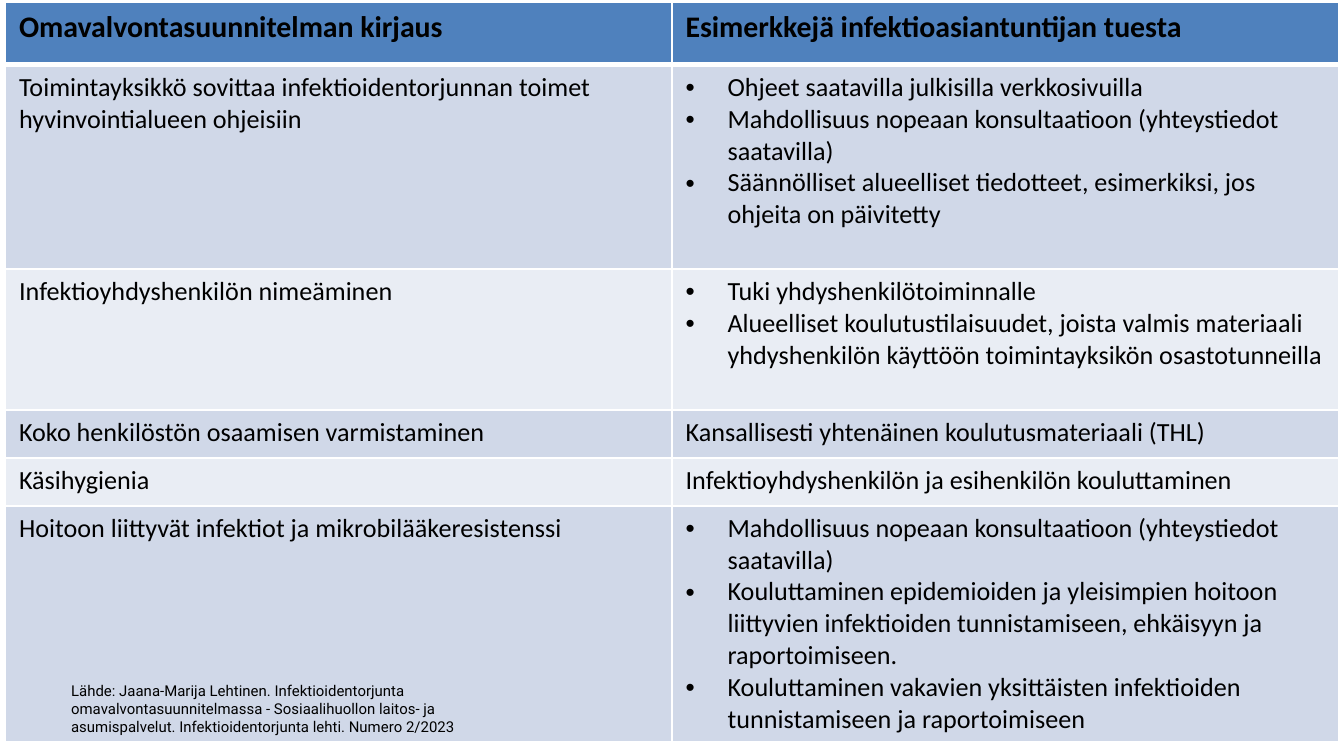
from dataclasses import dataclass

from lxml.etree import SubElement
from pptx import Presentation
from pptx.dml.color import RGBColor
from pptx.oxml.ns import qn
from pptx.util import Pt

BLACK = RGBColor(0, 0, 0)
WHITE = RGBColor(255, 255, 255)
BLUE = RGBColor(0x4F, 0x81, 0xBD)
BANDS = (RGBColor(0xE9, 0xED, 0xF4), RGBColor(0xD0, 0xD8, 0xE8))
INDENT = Pt(22.5)


@dataclass
class Row:
    height: float
    left: str
    right: list[str]


ROWS = [
    Row(33.4, "Omavalvontasuunnitelman kirjaus",
        ["Esimerkkejä infektioasiantuntijan tuesta"]),
    Row(109.4, "Toimintayksikkö sovittaa infektioidentorjunnan toimet hyvinvointialueen ohjeisiin",
        ["Ohjeet saatavilla julkisilla verkkosivuilla",
         "Mahdollisuus nopeaan konsultaatioon (yhteystiedot saatavilla)",
         "Säännölliset alueelliset tiedotteet, esimerkiksi, jos ohjeita on päivitetty"]),
    Row(75.6, "Infektioyhdyshenkilön nimeäminen",
        ["Tuki yhdyshenkilötoiminnalle",
         "Alueelliset koulutustilaisuudet, joista valmis materiaali "
         "yhdyshenkilön käyttöön toimintayksikön osastotunneilla"]),
    Row(25.6, "Koko henkilöstön osaamisen varmistaminen",
        ["Kansallisesti yhtenäinen koulutusmateriaali (THL)"]),
    Row(25.6, "Käsihygienia",
        ["Infektioyhdyshenkilön ja esihenkilön kouluttaminen"]),
    Row(126.7, "Hoitoon liittyvät infektiot ja mikrobilääkeresistenssi",
        ["Mahdollisuus nopeaan konsultaatioon (yhteystiedot saatavilla)",
         "Kouluttaminen epidemioiden ja yleisimpien hoitoon liittyvien infektioiden "
         "tunnistamiseen, ehkäisyyn ja raportoimiseen.",
         "Kouluttaminen vakavien yksittäisten infektioiden tunnistamiseen ja raportoimiseen"]),
]
SOURCE = ("Lähde: Jaana-Marija Lehtinen. Infektioidentorjunta omavalvontasuunnitelmassa - "
          "Sosiaalihuollon laitos- ja asumispalvelut. Infektioidentorjunta lehti. Numero 2/2023")


def write(frame, lines: list[str], *, size: float = 14, font: str = "Calibri",
          bold: bool = False, bullet: bool = False) -> None:
    """Fill a text frame, one paragraph a line."""
    frame.word_wrap = True
    for i, line in enumerate(lines):
        para = frame.paragraphs[0] if i == 0 else frame.add_paragraph()
        if bullet:
            props = para._p.get_or_add_pPr()
            props.set("marL", str(INDENT))
            props.set("indent", str(-INDENT))
            SubElement(props, qn("a:buFont"), typeface="Arial")
            SubElement(props, qn("a:buChar"), char="•")
        run = para.add_run()
        run.text = line
        run.font.name = font
        run.font.size = Pt(size)
        run.font.bold = bold
        run.font.color.rgb = BLACK


def border(cell, top: float, bottom: float) -> None:
    """Draw white cell borders; the sides are 1 pt."""
    props = cell._tc.get_or_add_tcPr()
    for side, width in zip("LRTB", (1, 1, top, bottom)):
        line = SubElement(props, qn(f"a:ln{side}"), w=str(Pt(width)))
        fill = SubElement(line, qn("a:solidFill"))
        SubElement(fill, qn("a:srgbClr"), val=str(WHITE))


def draw_table(slide, rows: list[Row]) -> None:
    high = sum(row.height for row in rows)
    table = slide.shapes.add_table(len(rows), 2, Pt(3), Pt(1.4), Pt(714.2), Pt(high)).table
    for r, row in enumerate(rows):
        table.rows[r].height = Pt(row.height)
        head = r == 0
        for c, lines in enumerate(([row.left], row.right)):
            cell = table.cell(r, c)
            border(cell, 3 if r == 1 else 1, 3 if head else 1)
            cell.fill.solid()
            cell.fill.fore_color.rgb = BLUE if head else BANDS[r % 2]
            write(cell.text_frame, lines, size=16 if head else 14,
                  bold=head, bullet=len(lines) > 1)


def main() -> None:
    deck = Presentation()
    deck.slide_width, deck.slide_height = Pt(720), Pt(405)
    slide = deck.slides.add_slide(deck.slide_layouts[6])

    # Table of plan entries and support
    draw_table(slide, ROWS)

    # Source note
    note = slide.shapes.add_textbox(Pt(31), Pt(361.5), Pt(255), Pt(36))
    write(note.text_frame, [SOURCE], size=8, font="Roboto")

    deck.save("out.pptx")


if __name__ == "__main__":
    main()
